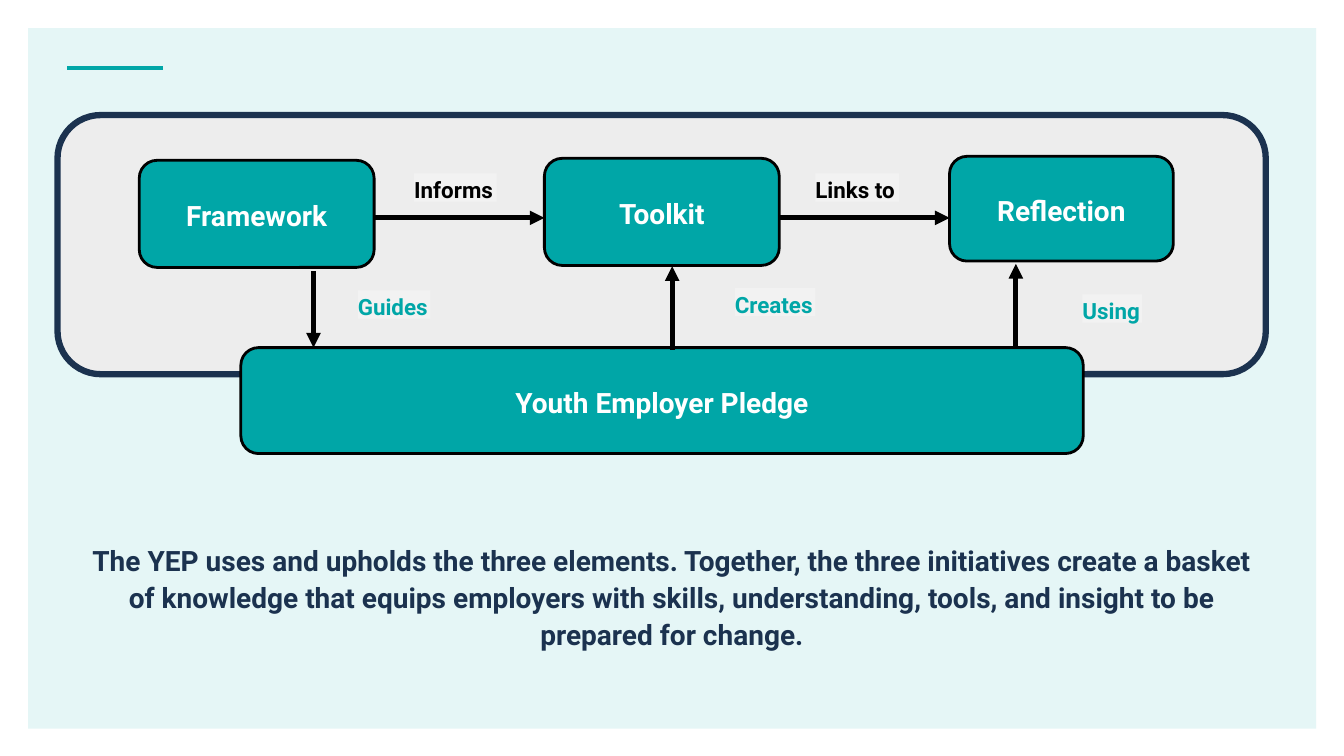
from dataclasses import dataclass

from lxml.etree import SubElement
from pptx import Presentation
from pptx.dml.color import RGBColor
from pptx.enum.shapes import MSO_CONNECTOR, MSO_SHAPE
from pptx.enum.text import MSO_ANCHOR, MSO_AUTO_SIZE, PP_ALIGN
from pptx.oxml.ns import qn
from pptx.shapes.autoshape import Shape
from pptx.slide import Slide
from pptx.util import Cm, Pt

TEAL = RGBColor(0x00, 0xA6, 0xA7)
NAVY = RGBColor(0x1B, 0x32, 0x4F)
BLACK = RGBColor(0x00, 0x00, 0x00)
WHITE = RGBColor(0xFF, 0xFF, 0xFF)
PALE_TEAL = RGBColor(0xE5, 0xF6, 0xF6)
PANEL_GREY = RGBColor(0xED, 0xED, 0xED)
LABEL_GREY = RGBColor(0xF2, 0xF2, 0xF2)
FONT = "Roboto"


@dataclass(frozen=True)
class Area:
    """A rectangle on the slide, in centimetres."""
    left: float
    top: float
    width: float
    height: float

    def lengths(self) -> tuple[Cm, Cm, Cm, Cm]:
        return Cm(self.left), Cm(self.top), Cm(self.width), Cm(self.height)


@dataclass(frozen=True)
class Element:
    text: str
    area: Area


@dataclass(frozen=True)
class Label:
    text: str
    left: float
    top: float
    width: float
    color: RGBColor


@dataclass(frozen=True)
class Arrow:
    start: tuple[float, float]
    end: tuple[float, float]


ELEMENTS = [
    Element("Reflection", Area(23.93, 3.94, 5.64, 2.64)),
    Element("Youth Employer Pledge", Area(6.07, 8.76, 21.23, 2.67)),
    Element("Framework", Area(3.51, 4.04, 5.92, 2.7)),
    Element("Toolkit", Area(13.72, 3.99, 5.92, 2.7)),
]
LABEL_HEIGHT = 0.71
LABELS = [
    Label("Informs", 10.44, 4.37, 2.08, BLACK),
    Label("Links to", 20.55, 4.37, 2.11, BLACK),
    Label("Using", 27.28, 7.42, 1.5, TEAL),
    Label("Creates", 18.52, 7.26, 2.03, TEAL),
    Label("Guides", 9.02, 7.32, 1.83, TEAL),
]
ARROWS = [
    Arrow((9.43, 5.49), (13.72, 5.49)),
    Arrow((19.64, 5.49), (23.93, 5.49)),
    Arrow((7.9, 6.83), (7.9, 8.76)),
    Arrow((16.94, 8.81), (16.94, 6.71)),
    Arrow((25.6, 8.76), (25.6, 6.65)),
]
SUMMARY = (
    "The YEP uses and upholds the three elements. Together, the three "
    "initiatives create a basket of knowledge that equips employers with "
    "skills, understanding, tools, and insight to be prepared for change."
)


def write(box: Shape, text: str, *, size: float, color: RGBColor,
          align: PP_ALIGN = PP_ALIGN.CENTER) -> None:
    para = box.text_frame.paragraphs[0]
    para.alignment = align
    para.line_spacing = 1.1
    para.space_before = Pt(0)
    span = para.add_run()
    span.text = text
    span.font.name = FONT
    span.font.size = Pt(size)
    span.font.bold = True
    span.font.color.rgb = color


def add_box(page: Slide, kind: MSO_SHAPE, area: Area, fill: RGBColor,
            line: RGBColor | None = None, weight: float = 0) -> Shape:
    box = page.shapes.add_shape(kind, *area.lengths())
    box.shadow.inherit = False
    box.fill.solid()
    box.fill.fore_color.rgb = fill
    if line is None:
        box.line.fill.background()
    else:
        box.line.color.rgb = line
        box.line.width = Pt(weight)
    return box


def add_element(page: Slide, element: Element) -> None:
    box = add_box(page, MSO_SHAPE.ROUNDED_RECTANGLE, element.area, TEAL, BLACK, 2)
    frame = box.text_frame
    frame.word_wrap = True
    frame.vertical_anchor = MSO_ANCHOR.MIDDLE
    frame.margin_left = frame.margin_right = Cm(0.2)
    frame.margin_top = frame.margin_bottom = Cm(0.1)
    write(box, element.text, size=20, color=WHITE)


def add_label(page: Slide, label: Label) -> None:
    area = Area(label.left, label.top, label.width, LABEL_HEIGHT)
    box = add_box(page, MSO_SHAPE.RECTANGLE, area, LABEL_GREY)
    frame = box.text_frame
    frame.word_wrap = False
    frame.auto_size = MSO_AUTO_SIZE.SHAPE_TO_FIT_TEXT
    frame.vertical_anchor = MSO_ANCHOR.TOP
    frame.margin_left = frame.margin_right = Cm(0)
    frame.margin_top = frame.margin_bottom = Cm(0)
    write(box, label.text, size=16, color=label.color, align=PP_ALIGN.LEFT)


def add_line(page: Slide, start: tuple[float, float], end: tuple[float, float],
             color: RGBColor, weight: float, *, arrowhead: bool = False) -> None:
    line = page.shapes.add_connector(
        MSO_CONNECTOR.STRAIGHT, *(Cm(length) for length in start + end))
    line.line.color.rgb = color
    line.line.width = Pt(weight)
    properties = line._element.spPr
    if arrowhead:
        SubElement(properties.find(qn("a:ln")), qn("a:tailEnd"), type="triangle")
    SubElement(properties, qn("a:effectLst"))


def add_summary(page: Slide) -> None:
    box = page.shapes.add_textbox(*Area(1.96, 13.49, 29.95, 3.02).lengths())
    box.text_frame.word_wrap = True
    box.text_frame.auto_size = MSO_AUTO_SIZE.SHAPE_TO_FIT_TEXT
    write(box, SUMMARY, size=20, color=NAVY)


def main() -> None:
    deck = Presentation()
    deck.slide_width, deck.slide_height = Cm(33.87), Cm(19.05)
    page = deck.slides.add_slide(deck.slide_layouts.get_by_name("Blank"))

    add_box(page, MSO_SHAPE.RECTANGLE, Area(0.71, 0.71, 32.46, 17.65), PALE_TEAL)
    add_line(page, (1.7, 1.71), (4.1, 1.71), TEAL, 3)
    add_box(page, MSO_SHAPE.ROUNDED_RECTANGLE, Area(1.45, 2.9, 30.45, 6.53),
            PANEL_GREY, NAVY, 4.5)
    for element in ELEMENTS:
        add_element(page, element)
    for label in LABELS:
        add_label(page, label)
    for arrow in ARROWS:
        add_line(page, arrow.start, arrow.end, BLACK, 3.5, arrowhead=True)
    add_summary(page)
    deck.save("out.pptx")


if __name__ == "__main__":
    main()
